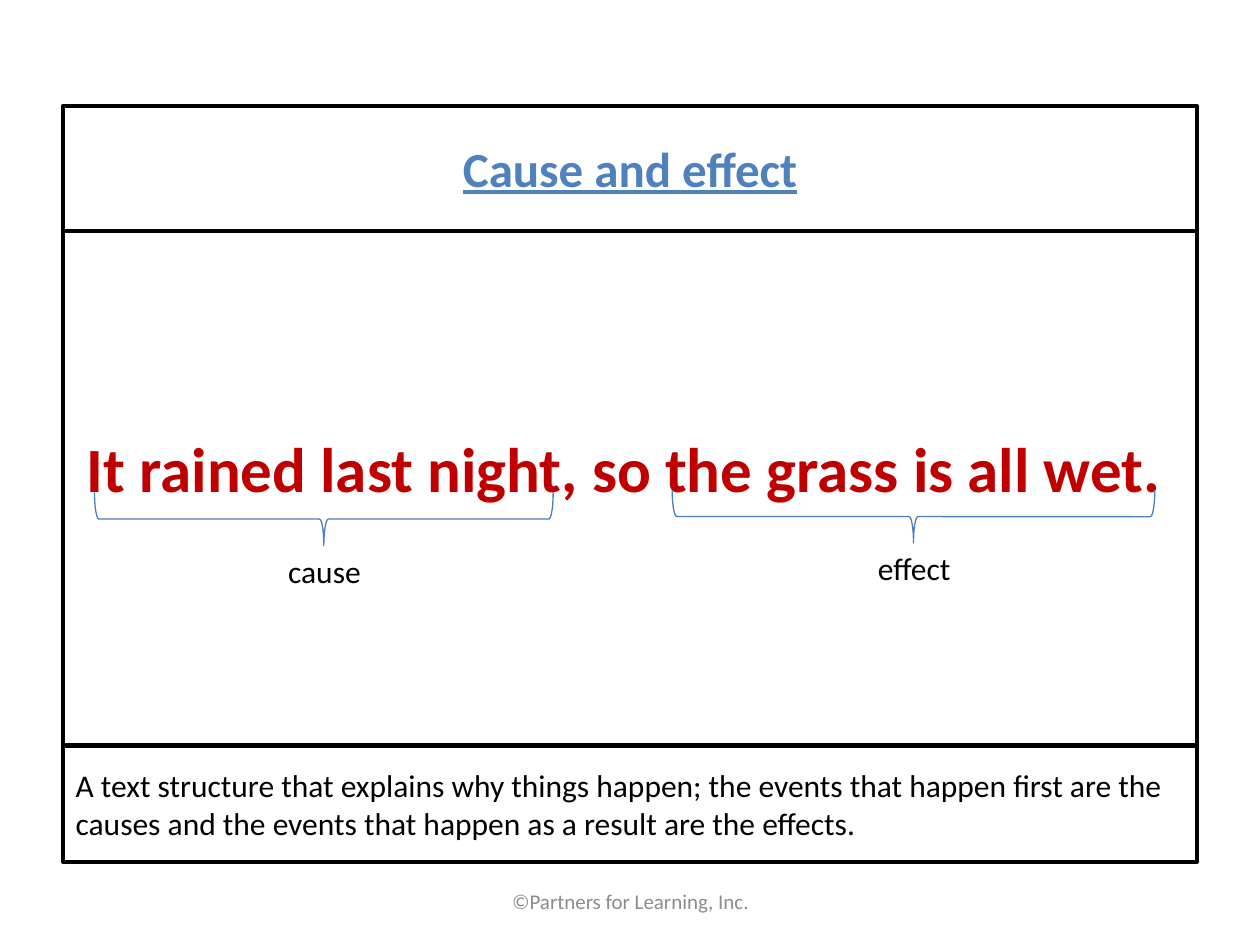
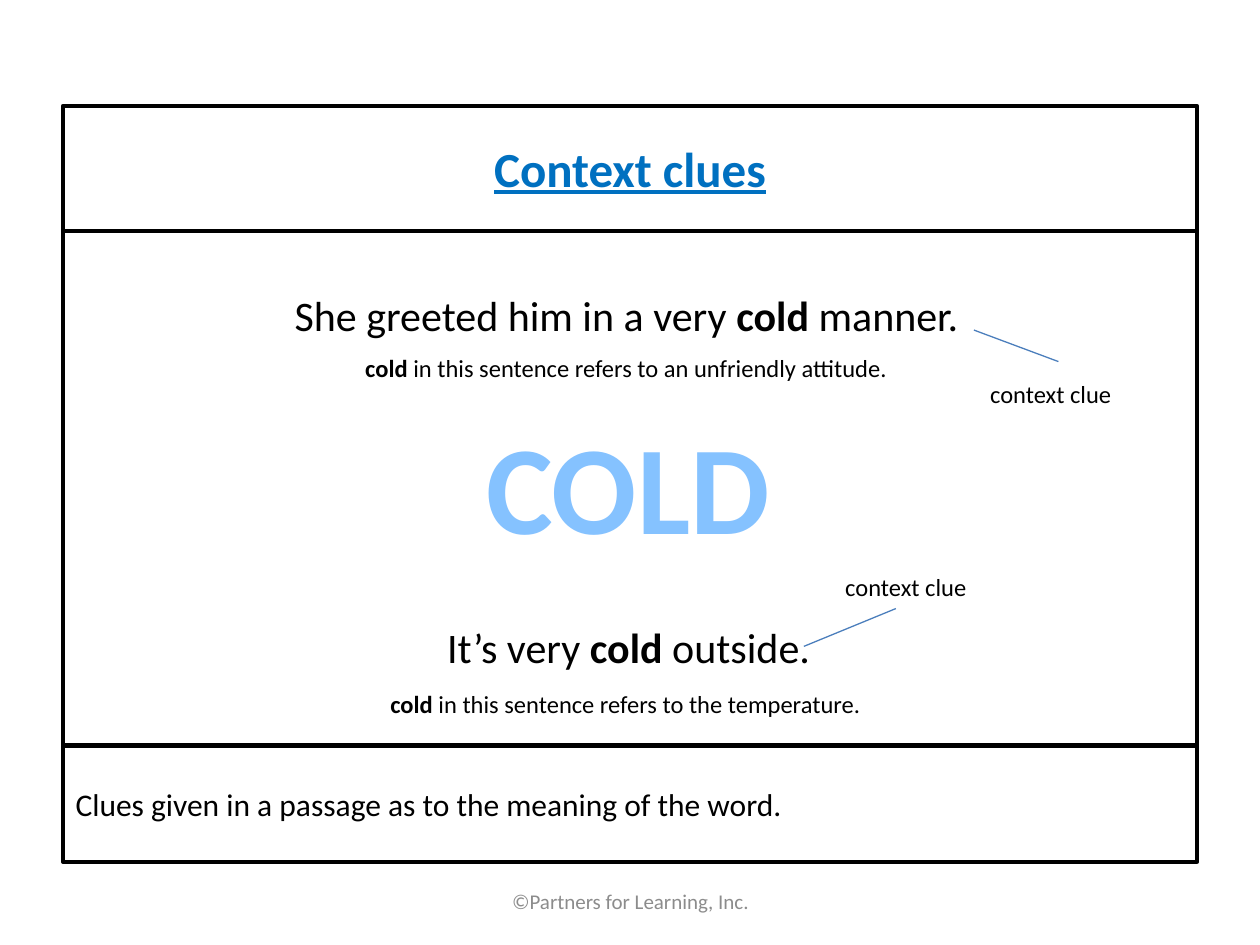
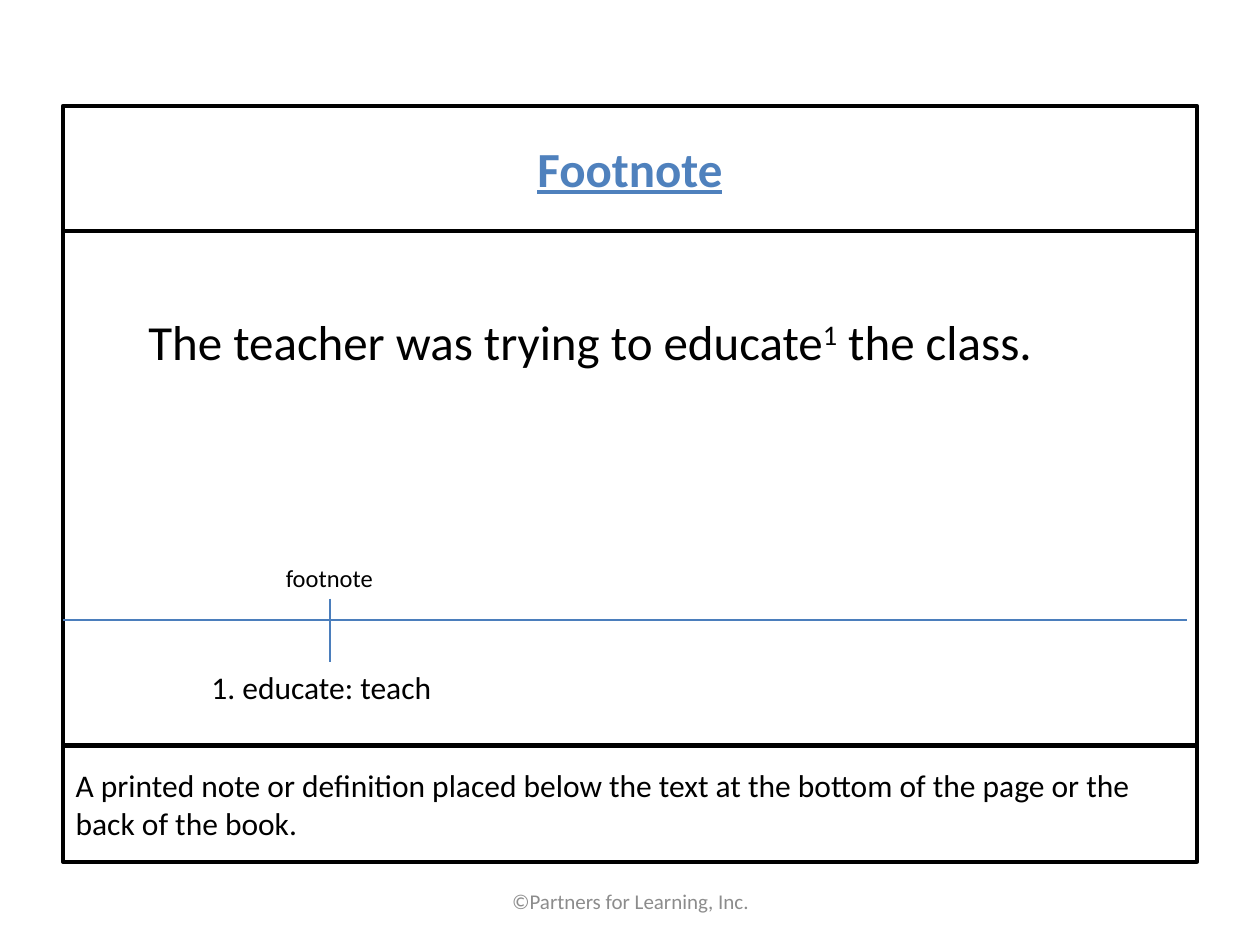
"""Build three vocabulary cards that share one framed layout."""
from lxml import etree
from pptx import Presentation
from pptx.dml.color import RGBColor
from pptx.enum import shapes, text
from pptx.oxml import ns
from pptx.util import Inches, Pt

FONT, BLACK, BLUE, LINE = "Calibri", "000000", "4F81BD", "4B7EBC"
FOOTER = "©Partners for Learning, Inc."
LEFT, WIDTH = 0.5, 9
BANDS = [(0.84, 0.99), (1.83, 4.08), (5.92, 0.92)]
PLAIN, BOLD, SUPER = {}, {"bold": True}, {"baseline": 30000}

CARDS = [
    {
        "term": "Cause and effect",
        "color": BLUE,
        "definition": "A text structure that explains why things happen; the events that "
                      "happen first are the causes and the events that happen as a result "
                      "are the effects.",
        "texts": [
            ((0.59, 3.36, 8.82, 0.71), 36, [("It rained last night, so the grass is all wet.",
                                             {"bold": True, "color": "C00000"})]),
        ],
        "braces": [("effect", 7.25, 3.88, 3.83), ("cause", 2.57, 3.9, 3.64)],
        "lines": [],
    },
    {
        "term": "Context clues",
        "color": "0070C0",
        "definition": "Clues given in a passage as to the meaning of the word.",
        "texts": [
            ((3.76, 3.19, 2.48, 1.31), 72, [("COLD", {"bold": True, "color": "85C2FF"})]),
            ((3.45, 4.88, 3.11, 0.5), 24, [("It’s very ", PLAIN), ("cold", BOLD),
                                           (" outside.", PLAIN)]),
            ((2.24, 2.25, 5.52, 0.5), 24, [("She greeted him in a very ", PLAIN),
                                           ("cold", BOLD), (" manner.", PLAIN)]),
            ((3, 5.42, 3.96, 0.34), 14, [
                ("cold", BOLD), (" in this sentence refers to the temperature.", PLAIN)]),
            ((2.8, 2.75, 4.39, 0.34), 14, [
                ("cold", BOLD), (" in this sentence refers to an unfriendly attitude.", PLAIN)]),
            ((7.76, 2.96, 1.17, 0.34), 14, [("context clue", PLAIN)]),
            ((6.61, 4.49, 1.17, 0.34), 14, [("context clue", PLAIN)]),
        ],
        "braces": [],
        "lines": [(8.4, 2.87, 7.73, 2.62), (6.38, 5.13, 7.11, 4.83)],
    },
    {
        "term": "Footnote",
        "color": BLUE,
        "definition": "A printed note or definition placed below the text at the bottom of "
                      "the page or the back of the book.",
        "texts": [
            ((1.08, 2.42, 7.33, 0.57), 28, [("The teacher was trying to educate", PLAIN),
                                            ("1", SUPER), (" the class.", PLAIN)]),
            ((1.58, 5.25, 4.67, 0.4), 18, [("1. educate: teach", PLAIN)]),
            ((2.17, 4.42, 0.9, 0.34), 14, [("footnote", PLAIN)]),
        ],
        "braces": [],
        "lines": [(0.5, 4.92, 9.42, 4.92), (2.62, 4.75, 2.62, 5.25)],
    },
]


def rgb(value):
    """Turn a hex string into a colour."""
    return RGBColor.from_string(value)


def add_run(p, value, size=18, color=BLACK, bold=False, underline=False, baseline=0):
    """Add one formatted run to a paragraph."""
    r = p.add_run()
    r.text = value
    f = r.font
    f.name, f.size, f.bold, f.underline = FONT, Pt(size), bold, underline
    f.color.rgb = rgb(color)
    if baseline:
        f._element.set("baseline", str(baseline))


def write(sp, runs, size=18, align=text.PP_ALIGN.LEFT, anchor=text.MSO_ANCHOR.TOP, wrap=True):
    """Fill a shape with one paragraph of runs."""
    tf = sp.text_frame
    tf.word_wrap, tf.vertical_anchor = wrap, anchor
    p = tf.paragraphs[0]
    p.alignment, p.space_before = align, Pt(0)
    for value, style in runs:
        add_run(p, value, **{"size": size, **style})
    return p


def place(sp, box):
    """Move a placeholder to a box in inches."""
    sp.left, sp.top, sp.width, sp.height = map(Inches, box)
    return sp


def add_text(s, box, runs, **style):
    """Add a text box."""
    return write(s.shapes.add_textbox(*map(Inches, box)), runs, **style)


def add_outline(s, kind, box, color, weight):
    """Add an unfilled preset shape."""
    sp = s.shapes.add_shape(kind, *map(Inches, box))
    sp.shadow.inherit = False
    sp.fill.background()
    sp.line.color.rgb, sp.line.width = rgb(color), Pt(weight)
    return sp


def add_line(s, ends):
    """Add a thin straight line."""
    cx = s.shapes.add_connector(shapes.MSO_CONNECTOR.STRAIGHT, *map(Inches, ends))
    cx.line.color.rgb, cx.line.width = rgb(LINE), Pt(0.75)
    etree.SubElement(cx._element.spPr, ns.qn("a:effectLst"))


def add_brace(s, label, center, middle, span, depth=0.42):
    """Add a brace that points down to its centred label."""
    box = (center - depth / 2, middle + 0.22 - span / 2, depth, span)
    add_outline(s, shapes.MSO_SHAPE.RIGHT_BRACE, box, LINE, 0.75).rotation = 90
    add_text(s, (center - 0.39, middle + 0.43, 0.79, 0.4), [(label, PLAIN)],
             align=text.PP_ALIGN.CENTER, wrap=False)


def add_card(prs, card):
    """Add one slide with its frame, term, definition and example."""
    s = prs.slides.add_slide(prs.slide_layouts[1])
    middle, center = text.MSO_ANCHOR.MIDDLE, text.PP_ALIGN.CENTER
    for top, height in BANDS:
        add_outline(s, shapes.MSO_SHAPE.RECTANGLE, (LEFT, top, WIDTH, height), BLACK, 2.25)
    add_text(s, (3.42, 6.95, 3.17, 0.4), [(FOOTER, {"color": "8C8C8C"})],
             size=12, align=center, anchor=middle)

    title = place(s.shapes.title, (LEFT, 0.83, WIDTH, 1))
    write(title, [(card["term"], {"color": card["color"], "bold": True, "underline": True})],
          size=28, align=center, anchor=middle)
    body = place(s.placeholders[1], (LEFT, *BANDS[2][:1], WIDTH, BANDS[2][1]))
    pPr = write(body, [(card["definition"], PLAIN)], anchor=middle)._p.get_or_add_pPr()
    pPr.set("marL", "0")
    pPr.set("indent", "0")
    etree.SubElement(pPr, ns.qn("a:buNone"))

    for box, size, runs in card["texts"]:
        add_text(s, box, runs, size=size, wrap=False)
    for brace in card["braces"]:
        add_brace(s, *brace)
    for ends in card["lines"]:
        add_line(s, ends)


def main():
    """Build and save the deck."""
    prs = Presentation()
    prs.slide_width, prs.slide_height = Inches(10), Inches(7.5)
    for card in CARDS:
        add_card(prs, card)
    prs.save("out.pptx")


if __name__ == "__main__":
    main()
